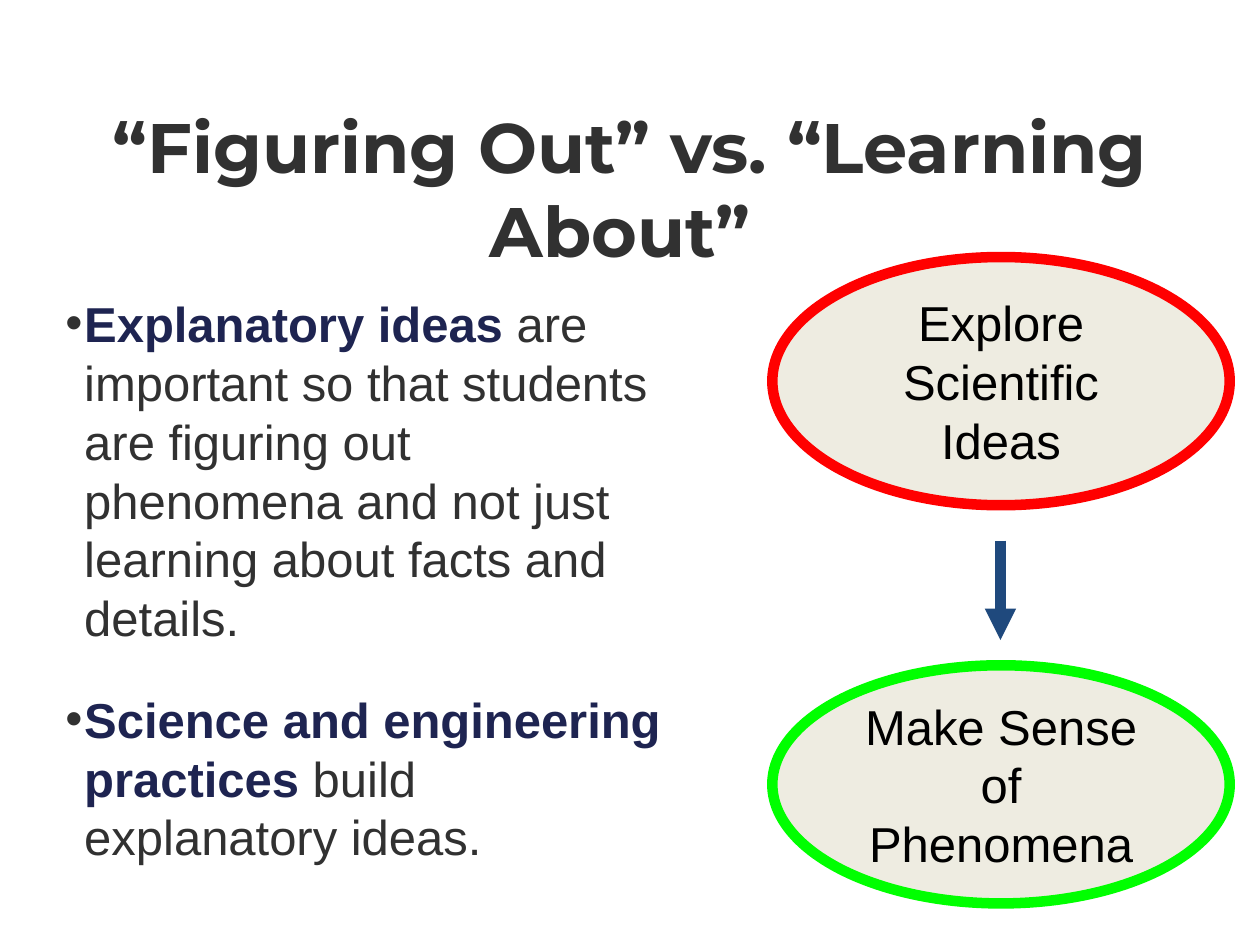
from lxml import etree
from pptx import Presentation
from pptx.dml.color import RGBColor
from pptx.enum.shapes import MSO_CONNECTOR, MSO_SHAPE
from pptx.enum.text import MSO_ANCHOR, PP_ALIGN
from pptx.oxml.ns import qn
from pptx.util import Inches, Pt

DARK = RGBColor(0x31, 0x31, 0x31)
NAVY = RGBColor(0x1E, 0x24, 0x51)
BLACK = RGBColor(0, 0, 0)
CREAM = RGBColor(0xEE, 0xEC, 0xE1)
RED = RGBColor(0xFF, 0, 0)
GREEN = RGBColor(0, 0xFF, 0)
BLUE = RGBColor(0x1F, 0x49, 0x7D)


class SlideBuilder:
    title_font = {"name": "Montserrat", "size": Pt(40), "bold": True}
    body_font = {"name": "Arial", "size": Pt(28)}
    line_width = Pt(6)
    inset = Inches(0.1)

    def __init__(self, prs):
        self.s = prs.slides.add_slide(prs.slide_layouts[6])

    def frame(self, sp, anchor):
        tf = sp.text_frame
        margins = ("margin_left", "margin_top", "margin_right", "margin_bottom")
        values = {"word_wrap": True, "vertical_anchor": anchor}
        values.update(dict.fromkeys(margins, self.inset))
        for key, value in values.items():
            setattr(tf, key, value)
        return tf

    def run(self, p, text, color, **font):
        r = p.add_run()
        r.text = text
        for key, value in font.items():
            setattr(r.font, key, value)
        r.font.color.rgb = color

    def centred(self, sp, text, color, font):
        p = self.frame(sp, MSO_ANCHOR.MIDDLE).paragraphs[0]
        p.alignment = PP_ALIGN.CENTER
        self.run(p, text, color, **font)

    def title(self, box, text):
        sp = self.s.shapes.add_textbox(*map(Inches, box))
        self.centred(sp, text, DARK, self.title_font)

    def bullet(self, p):
        pPr = p._p.get_or_add_pPr()
        pPr.set("marL", str(Inches(0.38)))
        pPr.set("indent", str(Inches(-0.15)))
        clr = etree.SubElement(pPr, qn("a:buClr"))
        etree.SubElement(clr, qn("a:srgbClr"), val=str(DARK))
        etree.SubElement(pPr, qn("a:buFont"), typeface="Arial")
        etree.SubElement(pPr, qn("a:buChar"), char="•")

    def bullets(self, box, items):
        sp = self.s.shapes.add_textbox(*map(Inches, box))
        tf = self.frame(sp, MSO_ANCHOR.TOP)
        for i, (term, rest) in enumerate(items):
            p = tf.add_paragraph() if i else tf.paragraphs[0]
            self.bullet(p)
            if i:
                p.space_before = Pt(24.4)
            self.run(p, term, NAVY, bold=True, **self.body_font)
            self.run(p, rest, DARK, bold=False, **self.body_font)

    def ellipse(self, box, text, outline):
        sp = self.s.shapes.add_shape(MSO_SHAPE.OVAL, *map(Inches, box))
        sp.shadow.inherit = False
        sp.fill.solid()
        sp.fill.fore_color.rgb = CREAM
        sp.line.color.rgb = outline
        sp.line.width = self.line_width
        self.centred(sp, text, BLACK, self.body_font)

    def arrow(self, start, end):
        sp = self.s.shapes.add_connector(
            MSO_CONNECTOR.STRAIGHT, *map(Inches, start + end))
        sp.line.color.rgb = BLUE
        sp.line.width = self.line_width
        etree.SubElement(sp.line._get_or_add_ln(), qn("a:tailEnd"), type="triangle")
        etree.SubElement(sp._element.spPr, qn("a:effectLst"))


def main():
    prs = Presentation()
    prs.slide_width, prs.slide_height = Inches(10), Inches(7.5)
    slide = SlideBuilder(prs)
    slide.title((0, 0.86, 10, 1.25), "“Figuring Out” vs. “Learning About” ")
    slide.bullets((0.19, 2.23, 5.19, 4.95), [
        ("Explanatory ideas ",
         "are important so that students are figuring out phenomena "
         "and not just learning about facts and details."),
        ("Science and engineering practices ", "build explanatory ideas."),
    ])
    slide.ellipse((6.13, 2.04, 3.63, 1.97), "Explore Scientific Ideas", RED)
    slide.ellipse((6.13, 5.28, 3.63, 1.89), "Make Sense of Phenomena", GREEN)
    slide.arrow((7.94, 4.29), (7.94, 5.08))
    prs.save("out.pptx")


if __name__ == "__main__":
    main()
